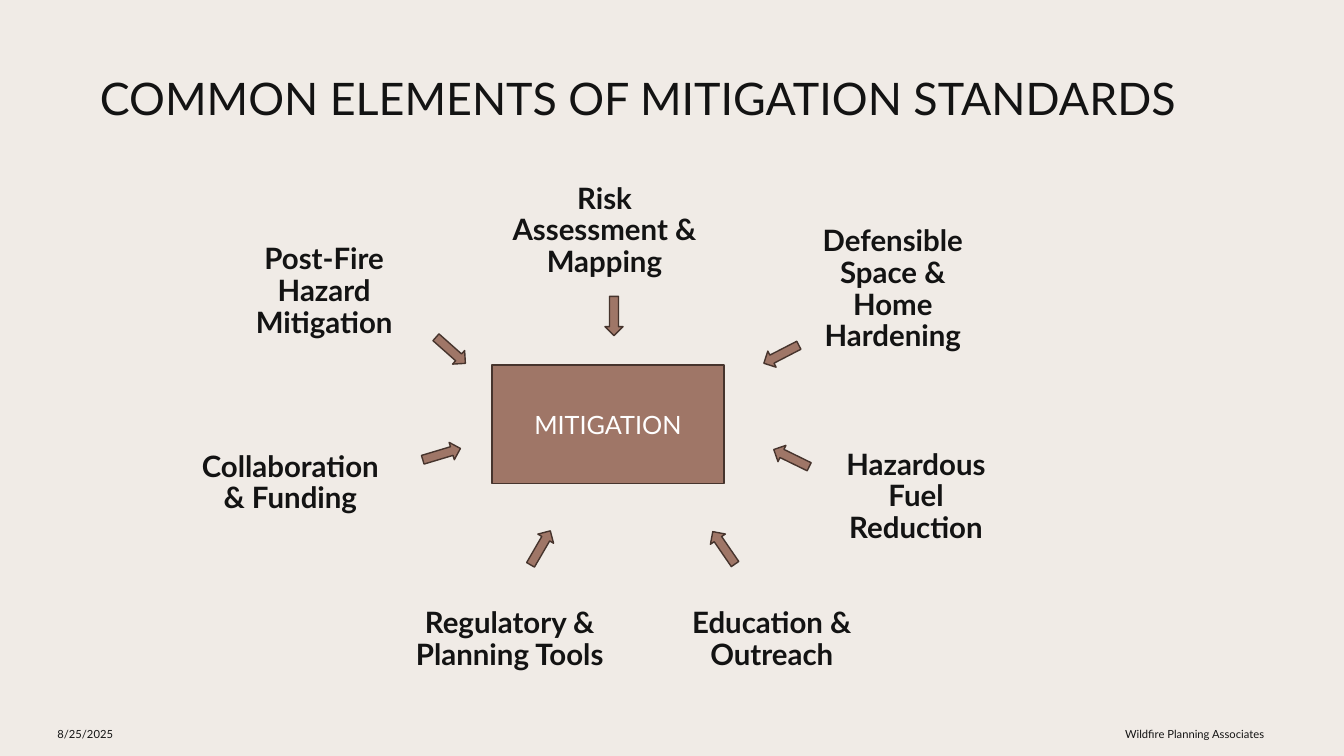
"""Build a slide of seven elements pointing at a central mitigation box."""
import pptx
import pptx.util
import pptx.dml.color
import pptx.enum.shapes
import pptx.enum.text

Inches = pptx.util.Inches
RGBColor = pptx.dml.color.RGBColor
Align = pptx.enum.text.PP_ALIGN
Shape = pptx.enum.shapes.MSO_SHAPE

CREAM = RGBColor(0xF0, 0xEB, 0xE6)
INK = RGBColor(0x13, 0x13, 0x13)
CLAY = RGBColor(0x9F, 0x76, 0x67)
UMBER = RGBColor(0x46, 0x34, 0x2D)
WHITE = RGBColor(0xFF, 0xFF, 0xFF)

ELEMENTS = [
    ("Post-Fire Hazard Mitigation", 2.32, 2.33, 1.79, 1.13),
    ("Risk Assessment & Mapping", 5.05, 1.78, 1.89, 1.03),
    ("Defensible Space & Home Hardening", 7.96, 2.31, 1.79, 1.13),
    ("Collaboration & Funding", 1.88, 4.19, 2, 1.21),
    ("Regulatory & Planning Tools", 4.11, 5.8, 1.89, 1.1),
    ("Education & Outreach", 6.71, 5.8, 1.89, 1.1),
    ("Hazardous Fuel Reduction", 8.21, 4.33, 1.75, 1.21),
]
ARROWS = [
    (6, 2.94, 0),
    (7.66, 3.32, 62.7),
    (7.76, 4.35, 116),
    (4.38, 3.28, 311.6),
    (7.09, 5.24, 145.5),
    (4.29, 4.31, 253.3),
    (5.27, 5.24, 210.1),
]
FOOTERS = [
    ("8/25/2025", 0.47, 3.11, Align.LEFT),
    ("Wildfire Planning Associates", 9.73, 2.91, Align.RIGHT),
]


def write(box, text, size, color, align, bold=False):
    frame = box.text_frame
    frame.word_wrap = True
    frame.vertical_anchor = pptx.enum.text.MSO_ANCHOR.MIDDLE
    frame.text = text
    para = frame.paragraphs[0]
    para.alignment = align
    para.font.name = "Lato"
    para.font.size = pptx.util.Pt(size)
    para.font.bold = bold
    para.font.color.rgb = color
    return frame


def add_clay_shape(kind, left, top, width, height):
    shape = page.shapes.add_shape(
        kind, Inches(left), Inches(top), Inches(width), Inches(height))
    shape.shadow.inherit = False
    shape.fill.solid()
    shape.fill.fore_color.rgb = CLAY
    shape.line.color.rgb = UMBER
    shape.line.width = pptx.util.Pt(1)
    return shape


deck = pptx.Presentation()
deck.slide_width = Inches(13.33)
deck.slide_height = Inches(7.5)
page = deck.slides.add_slide(deck.slide_layouts[5])
page.background.fill.solid()
page.background.fill.fore_color.rgb = CREAM

title = page.shapes.title
title.left, title.top = Inches(0.89), Inches(0.65)
title.width, title.height = Inches(11.56), Inches(0.64)
write(title, "COMMON ELEMENTS OF MITIGATION STANDARDS", 32, INK, Align.LEFT)

center = add_clay_shape(Shape.RECTANGLE, 4.88, 3.62, 2.3, 1.18)
write(center, "MITIGATION", 18, WHITE, Align.CENTER)

for text, left, top, width, height in ELEMENTS:
    label = page.shapes.add_textbox(
        Inches(left), Inches(top), Inches(width), Inches(height))
    frame = write(label, text, 21, INK, Align.CENTER, bold=True)
    frame.margin_left = frame.margin_right = 0
    frame.margin_top = frame.margin_bottom = 0
    frame.paragraphs[0].line_spacing = 0.9

for left, top, angle in ARROWS:
    arrow = add_clay_shape(Shape.DOWN_ARROW, left, top, 0.18, 0.39)
    arrow.rotation = angle

for text, left, width, align in FOOTERS:
    footer = page.shapes.add_textbox(
        Inches(left), Inches(7.1), Inches(width), Inches(0.37))
    write(footer, text, 8, INK, align)

deck.save("out.pptx")
